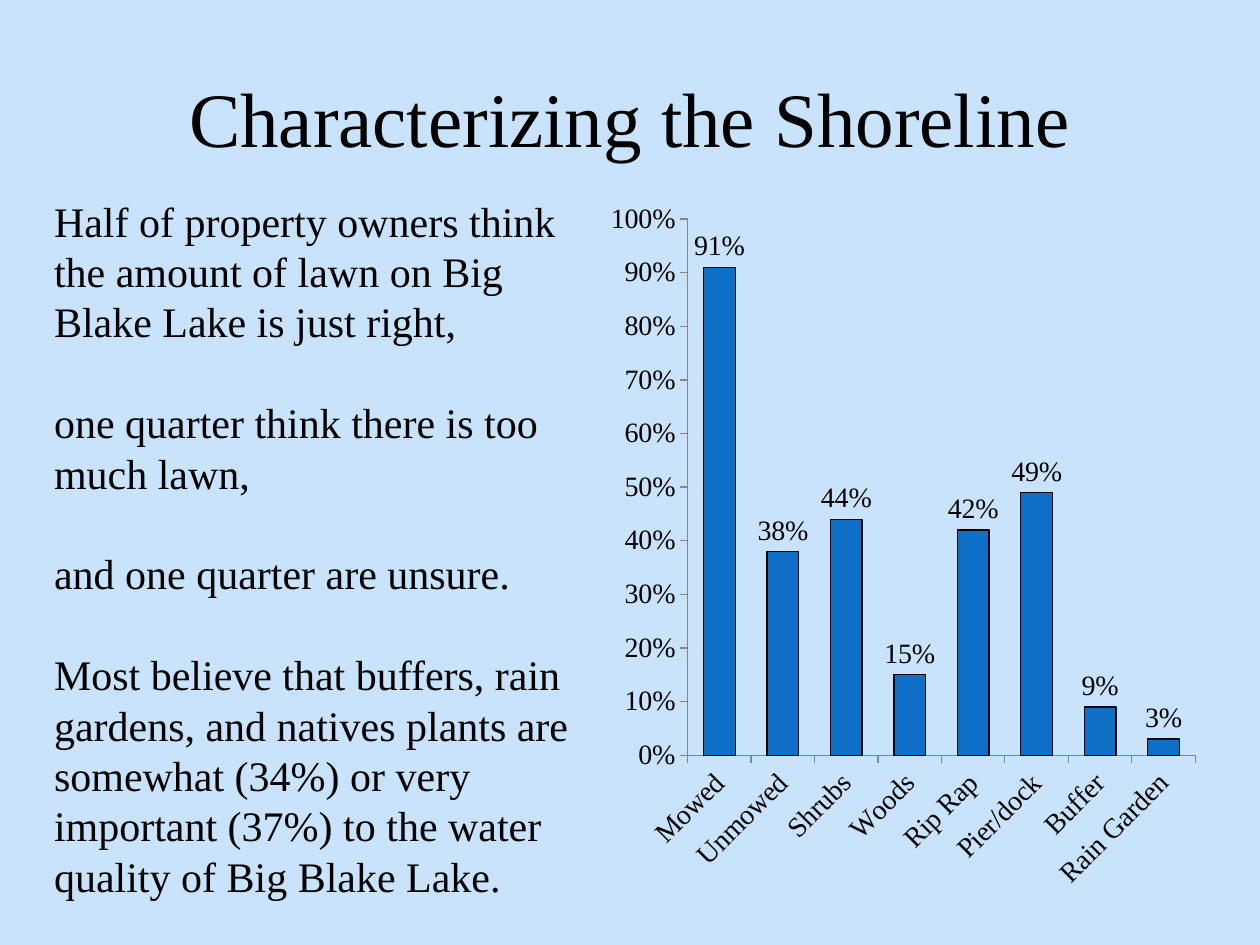
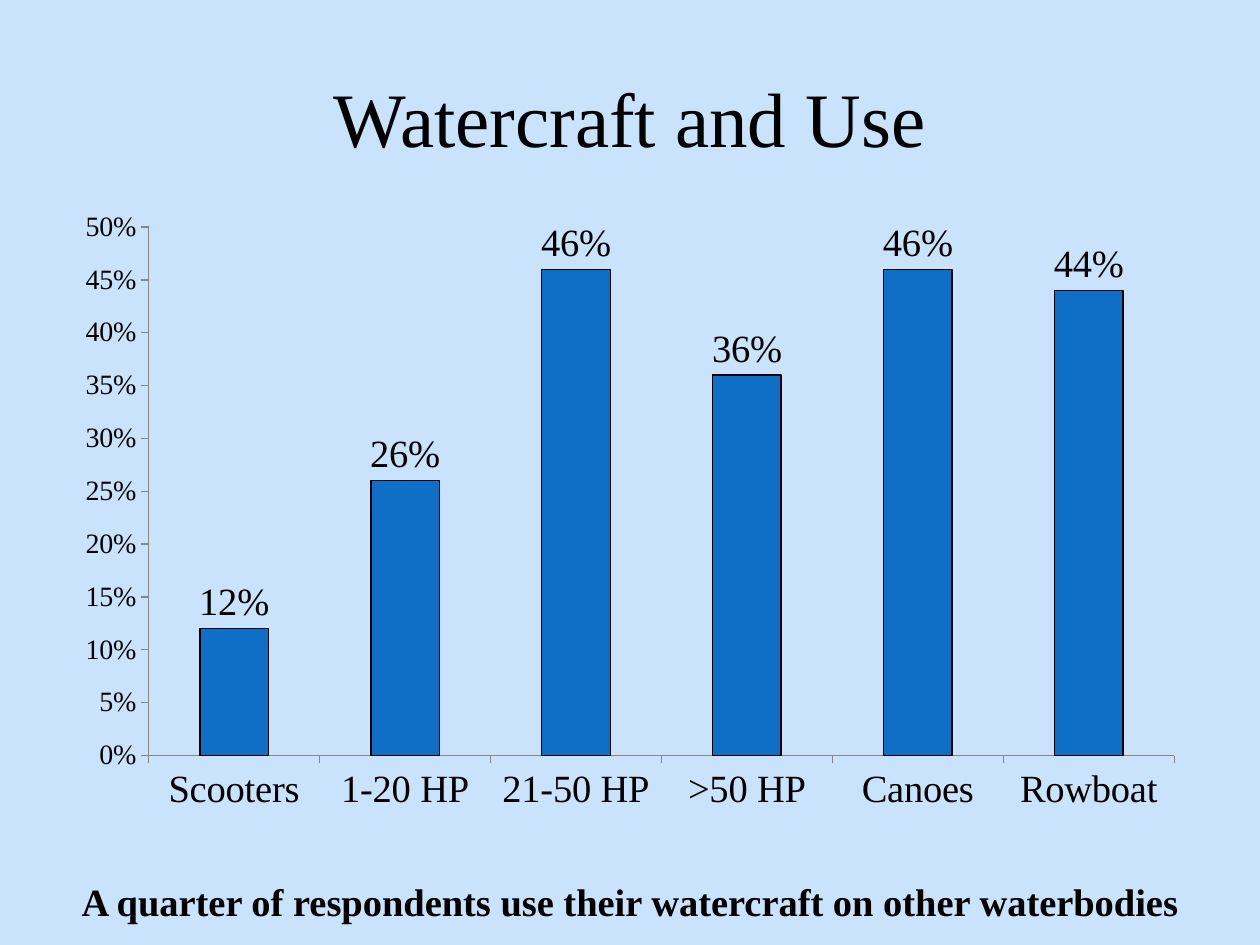
from dataclasses import dataclass

from pptx import Presentation
from pptx.chart.data import CategoryChartData
from pptx.dml.color import RGBColor
from pptx.enum.chart import XL_CHART_TYPE as ChartType
from pptx.enum.chart import XL_LABEL_POSITION as LabelPos
from pptx.enum.chart import XL_TICK_MARK as Tick
from pptx.enum.text import MSO_ANCHOR as Anchor
from pptx.enum.text import PP_ALIGN as Align
from pptx.slide import Slide
from pptx.text.text import Font
from pptx.util import Cm, Pt

FONT = "Times New Roman"
SKY, BLUE, BLACK, GRAY = "C8E3FB", "0F6FC6", "000000", "868686"


@dataclass(frozen=True)
class Box:
    """Place and size in centimetres."""

    left: float
    top: float
    width: float
    height: float

    def emu(self) -> tuple[Cm, Cm, Cm, Cm]:
        """Return the four lengths as python-pptx expects them."""
        return Cm(self.left), Cm(self.top), Cm(self.width), Cm(self.height)


@dataclass(frozen=True)
class TextBlock:
    """Paragraphs that share one style."""

    box: Box
    paragraphs: tuple[str, ...]
    size: float
    align: Align = Align.LEFT
    anchor: Anchor = Anchor.TOP
    bold: bool = False
    leading: float | None = None
    gap: float = 0


@dataclass(frozen=True)
class BarChart:
    """Percentages drawn as columns."""

    box: Box
    shares: dict[str, float]
    size: float
    gap_width: int
    top_value: float
    step: float
    label_turn: int = 0


TITLE_BOX = Box(1.27, 0.76, 22.86, 3.18)

SHORELINE_CHART = BarChart(
    Box(12.07, 3.81, 12.27, 14.4),
    {"Mowed": 0.91, "Unmowed": 0.38, "Shrubs": 0.44, "Woods": 0.15,
     "Rip Rap": 0.42, "Pier/dock": 0.49, "Buffer": 0.09, "Rain Garden": 0.03},
    size=16, gap_width=100, top_value=1, step=0.1, label_turn=-45,
)
SHORELINE_TEXT = TextBlock(
    Box(0.84, 3.81, 11.23, 14.63),
    ("Half of property owners think the amount of lawn on Big Blake Lake is just right,",
     "one quarter think there is too much lawn,",
     "and one quarter are unsure.",
     "Most believe that buffers, rain gardens, and natives plants are somewhat (34%) "
     "or very important (37%) to the water quality of Big Blake Lake."),
    size=24, leading=28.8, gap=28.8,
)
WATERCRAFT_CHART = BarChart(
    Box(1.27, 4.01, 22.86, 12.57),
    {"Scooters": 0.12, "1-20 HP": 0.26, "21-50 HP": 0.46,
     ">50 HP": 0.36, "Canoes": 0.46, "Rowboat": 0.44},
    size=22, gap_width=150, top_value=0.5, step=0.05,
)
WATERCRAFT_TEXT = TextBlock(
    Box(0, 17.58, 25.4, 1.19),
    ("A quarter of respondents use their watercraft on other waterbodies",),
    size=22, align=Align.CENTER, bold=True,
)


def rgb(color: str) -> RGBColor:
    """Turn a hex string into a colour."""
    return RGBColor.from_string(color)


def style_font(font: Font, size: float, bold: bool = False) -> None:
    """Apply the shared typeface and colour."""
    font.name, font.size, font.bold = FONT, Pt(size), bold
    font.color.rgb = rgb(BLACK)


def add_text(s: Slide, block: TextBlock) -> None:
    """Draw a block of text."""
    tf = s.shapes.add_textbox(*block.box.emu()).text_frame
    tf.word_wrap = True
    tf.vertical_anchor = block.anchor
    for i, text in enumerate(block.paragraphs):
        p = tf.add_paragraph() if i else tf.paragraphs[0]
        p.text = text
        p.alignment = block.align
        if block.leading:
            p.line_spacing = Pt(block.leading)
        if i:
            p.space_before = Pt(block.gap)
        for r in p.runs:
            style_font(r.font, block.size, block.bold)


def add_bars(s: Slide, spec: BarChart) -> None:
    """Draw a column chart with percentage labels."""
    data = CategoryChartData(number_format="0%")
    data.categories = list(spec.shares)
    data.add_series("Series 1", list(spec.shares.values()))
    chart = s.shapes.add_chart(ChartType.COLUMN_CLUSTERED, *spec.box.emu(), data).chart
    chart.has_legend = chart.has_title = False
    style_font(chart.font, spec.size)

    cats, vals = chart.category_axis, chart.value_axis
    for axis, size in ((cats, spec.size), (vals, 16)):
        axis.has_major_gridlines = False
        axis.major_tick_mark, axis.minor_tick_mark = Tick.OUTSIDE, Tick.NONE
        axis.format.line.color.rgb = rgb(GRAY)
        axis.format.line.width = Pt(0.75)
        style_font(axis.tick_labels.font, size)
    vals.minimum_scale, vals.maximum_scale, vals.major_unit = 0, spec.top_value, spec.step
    vals.tick_labels.number_format = "0%"
    vals.tick_labels.number_format_is_linked = False
    if spec.label_turn:
        cats._element.txPr.bodyPr.set("rot", str(spec.label_turn * 60000))

    plot = chart.plots[0]
    plot.gap_width, plot.vary_by_categories = spec.gap_width, False
    bars = plot.series[0].format
    bars.fill.solid()
    bars.fill.fore_color.rgb = rgb(BLUE)
    bars.line.color.rgb = rgb(BLACK)
    bars.line.width = Pt(0.75)
    plot.has_data_labels = True
    labels = plot.data_labels
    labels.show_value, labels.position = True, LabelPos.OUTSIDE_END
    labels.number_format, labels.number_format_is_linked = "0%", False
    style_font(labels.font, spec.size)


def add_slide(prs: Presentation, title: str, chart: BarChart, text: TextBlock) -> None:
    """Add a slide with a title, a chart and a text block."""
    s = prs.slides.add_slide(prs.slide_layouts[6])
    s.background.fill.solid()
    s.background.fill.fore_color.rgb = rgb(SKY)
    add_text(s, TextBlock(TITLE_BOX, (title,), 44, Align.CENTER, Anchor.MIDDLE))
    add_bars(s, chart)
    add_text(s, text)


def main() -> None:
    """Build and save the presentation."""
    prs = Presentation()
    prs.slide_width, prs.slide_height = Cm(25.4), Cm(19.05)
    add_slide(prs, "Characterizing the Shoreline", SHORELINE_CHART, SHORELINE_TEXT)
    add_slide(prs, "Watercraft and Use", WATERCRAFT_CHART, WATERCRAFT_TEXT)
    prs.save("out.pptx")


if __name__ == "__main__":
    main()
